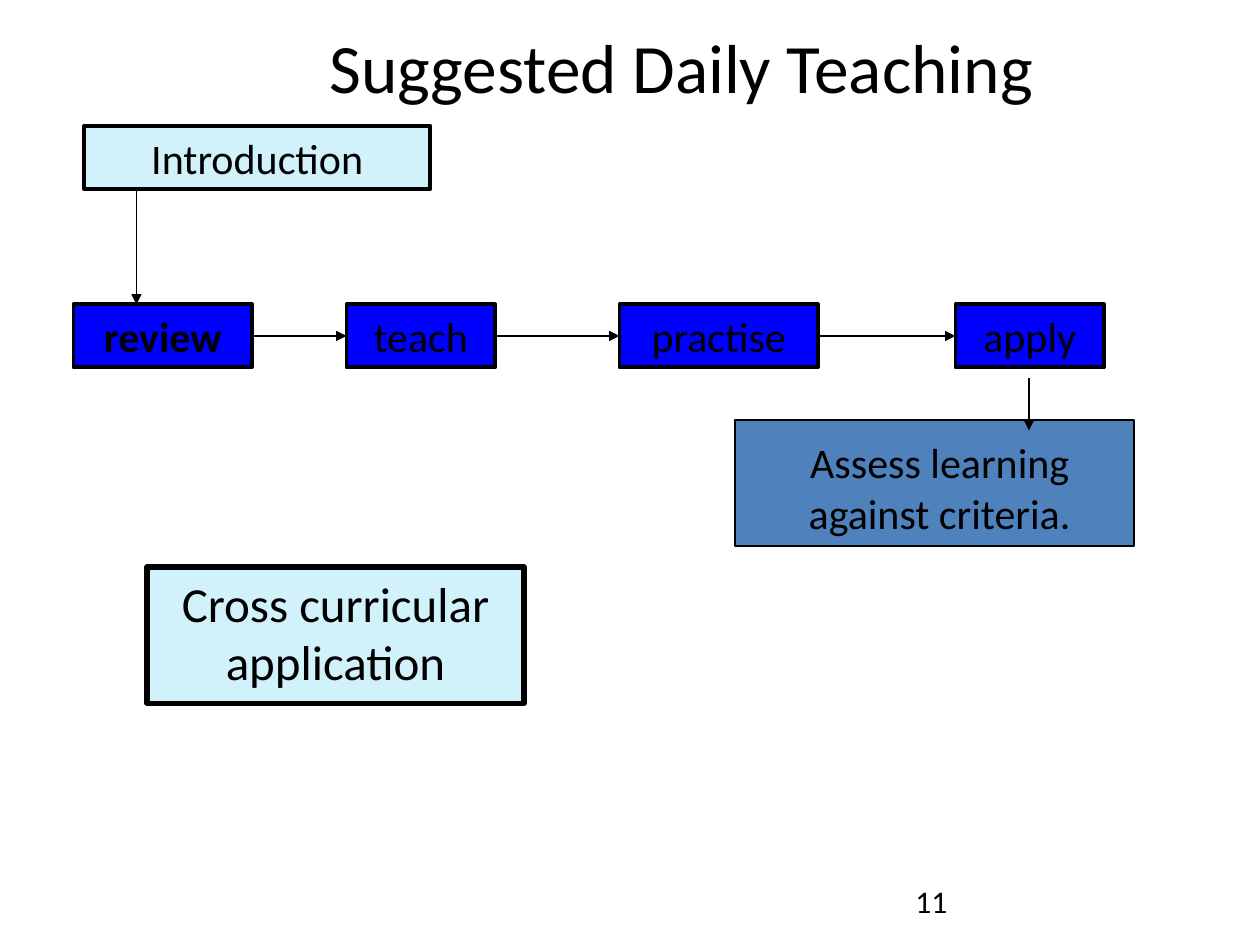
from lxml import etree
from pptx import Presentation, util as u
from pptx.dml.color import RGBColor
from pptx.enum import shapes, text
from pptx.oxml.ns import qn

COLORS = {"ink": "000000", "step": "0000FF", "stage": "D1F1FB", "assess": "4F81BD"}
COLUMNS, ROWS = 120, 90
CELL = u.Inches(10) // COLUMNS


def color(name):
    """Return the named colour."""
    return RGBColor.from_string(COLORS[name])


def grid(*cells):
    """Turn grid columns and rows into lengths."""
    return [u.Emu(round(cell * CELL)) for cell in cells]


def write(frame, words, size, bold=False, align=text.PP_ALIGN.CENTER,
          anchor=text.MSO_ANCHOR.TOP):
    """Set one paragraph of wrapped text in a frame."""
    frame.word_wrap = True
    frame.vertical_anchor = anchor
    paragraph = frame.paragraphs[0]
    paragraph.text = words
    paragraph.alignment = align
    paragraph.font.name = "Calibri"
    paragraph.font.size = u.Pt(size)
    paragraph.font.bold = bold
    paragraph.font.color.rgb = color("ink")


def label(slide, box, words, size, **style):
    """Place unframed text in a grid box."""
    write(slide.shapes.add_textbox(*grid(*box)).text_frame, words, size, **style)


def panel(slide, box, fill, border):
    """Place an outlined rectangle in a grid box."""
    rectangle = slide.shapes.add_shape(shapes.MSO_SHAPE.RECTANGLE, *grid(*box))
    rectangle.shadow.inherit = False
    rectangle.fill.solid()
    rectangle.fill.fore_color.rgb = color(fill)
    rectangle.line.color.rgb = color("ink")
    rectangle.line.width = u.Pt(border)
    return rectangle


def arrow(slide, start, end):
    """Draw a thin arrow between two grid points."""
    connector = slide.shapes.add_connector(
        shapes.MSO_CONNECTOR.STRAIGHT, *grid(*start, *end))
    connector.line.color.rgb = color("ink")
    connector.line.width = u.Pt(0.75)
    etree.SubElement(connector.line._get_or_add_ln(), qn("a:tailEnd"), type="triangle")
    etree.SubElement(connector._element.spPr, qn("a:effectLst"))
    return connector


def stage(slide, box, words, size, border):
    """Place a pale stage box with its name."""
    write(panel(slide, box, "stage", border).text_frame, words, size)


def lesson_steps(slide, top, height, steps):
    """Place a row of lesson steps and join neighbours with arrows."""
    previous = None
    for name, left, width in steps:
        step = panel(slide, (left, top, width, height), "step", 2.25)
        write(step.text_frame, name, 24, bold=previous is None)
        if previous:
            link = arrow(slide, (left, top), (left, top))
            link.begin_connect(previous, 3)
            link.end_connect(step, 1)
        previous = step


def assessment(slide, box):
    """Place the assessment panel with its text inset by one cell."""
    left, top, width, height = box
    panel(slide, box, "assess", 0.75)
    label(slide, (left + 1, top + 1, width - 1, height - 1),
          "Assess learning against criteria.", 24)


def main():
    """Build the daily teaching slide."""
    deck = Presentation()
    deck.slide_width, deck.slide_height = grid(COLUMNS, ROWS)
    slide = deck.slides.add_slide(deck.slide_layouts[6])
    label(slide, (13.4, 1.6, 103, 9.4), "Suggested Daily Teaching", 39.6,
          anchor=text.MSO_ANCHOR.MIDDLE)
    stage(slide, (8, 12, 33, 6), "Introduction", 24, 2.25)
    lesson_steps(slide, 29, 6, [("review", 7, 17), ("teach", 33, 14.15),
                                ("practise", 59, 18.9), ("apply", 91, 14.15)])
    assessment(slide, (70, 40, 38, 12))
    stage(slide, (14, 54, 35.9, 13), "Cross curricular application", 28, 3)
    arrow(slide, (13, 18), (13, 29))
    arrow(slide, (98, 36), (98, 41))
    label(slide, (86, 83.4, 28, 4.8), "11", 18, align=text.PP_ALIGN.LEFT)
    deck.save("out.pptx")


if __name__ == "__main__":
    main()
